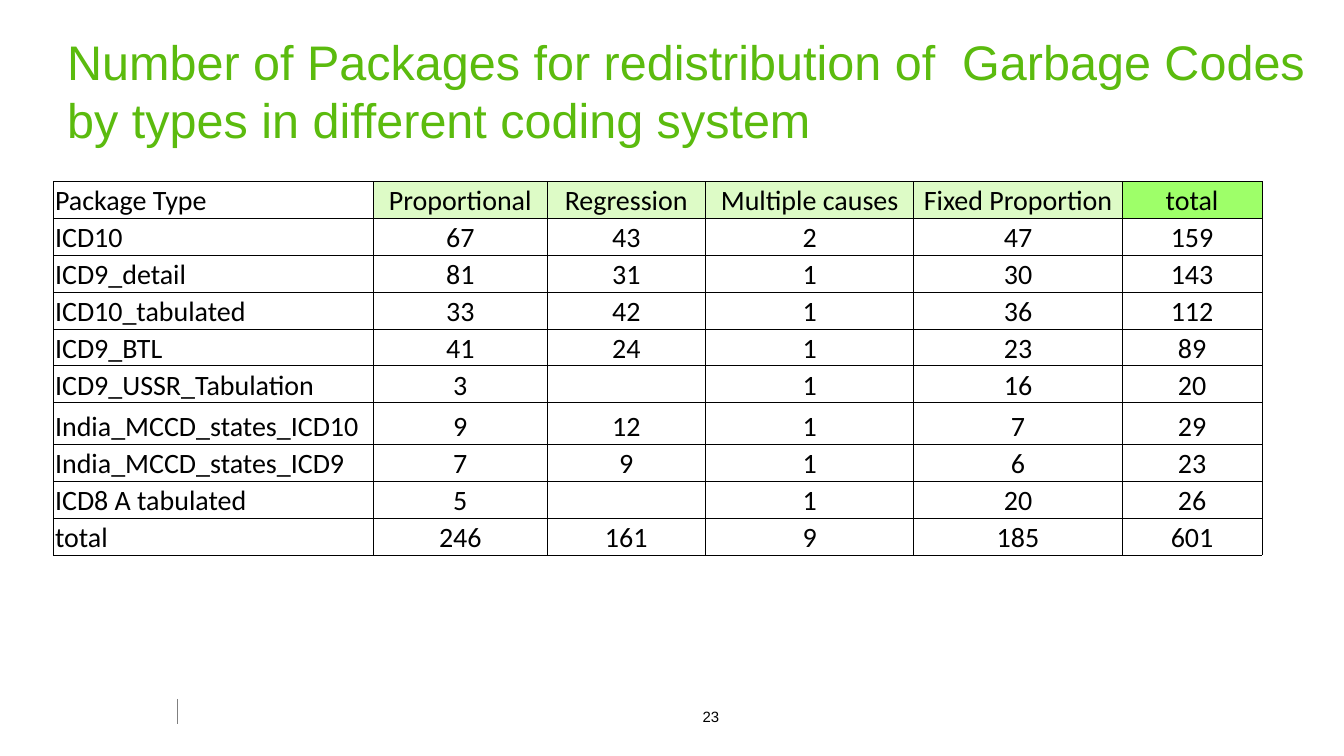
"""Build the slide that counts redistribution packages by type and coding system."""
import pptx
import pptx.dml.color
import pptx.enum.shapes
import pptx.enum.text
import pptx.oxml.ns
import pptx.util
from lxml import etree
from pptx.util import Inches

COLORS = {
    "title": "5BBB0E",
    "text": "000000",
    "border": "000000",
    "rule": "808080",
    "type_header": "DDFBC6",
    "total_header": "9EFF69",
}
ALIGN = pptx.enum.text.PP_ALIGN
ANCHOR = pptx.enum.text.MSO_ANCHOR

HEADER = ["Package Type", "Proportional", "Regression", "Multiple causes", "Fixed Proportion", "total"]
HEADER_FILLS = [None] + ["type_header"] * 4 + ["total_header"]
PACKAGES = [
    ["ICD10", 67, 43, 2, 47, 159],
    ["ICD9_detail", 81, 31, 1, 30, 143],
    ["ICD10_tabulated", 33, 42, 1, 36, 112],
    ["ICD9_BTL", 41, 24, 1, 23, 89],
    ["ICD9_USSR_Tabulation", 3, "", 1, 16, 20],
    ["India_MCCD_states_ICD10", 9, 12, 1, 7, 29],
    ["India_MCCD_states_ICD9", 7, 9, 1, 6, 23],
    ["ICD8 A tabulated", 5, "", 1, 20, 26],
    ["total", 246, 161, 9, 185, 601],
]
COLUMN_WIDTHS = [2.38, 1.29, 1.18, 1.55, 1.55, 1.04]
TABLE_HEIGHT = 2.78
TALL_ROW = 0.31
PLAIN_ROW = (TABLE_HEIGHT - TALL_ROW) / len(PACKAGES)


def rgb(name):
    """Return the named colour."""
    return pptx.dml.color.RGBColor.from_string(COLORS[name])


def write_text(text_frame, text, size, font="Arial", color="text", align=ALIGN.LEFT):
    """Write one formatted paragraph into a text frame."""
    paragraph = text_frame.paragraphs[0]
    paragraph.alignment = align
    if text == "":
        paragraph._p.get_or_add_endParaRPr().set("sz", str(size * 100))
        return
    run = paragraph.add_run()
    run.text = str(text)
    run.font.size = pptx.util.Pt(size)
    run.font.name = font
    run.font.color.rgb = rgb(color)


class SlideBuilder:
    """Hold the table style and the current slide."""

    table_font = "Calibri"
    table_size = 15
    border_width = 0.5

    def __init__(self, presentation):
        """Add a title-only slide."""
        self.slide = presentation.slides.add_slide(presentation.slide_layouts[5])

    def add_title(self, text, left, top, width, height):
        """Place and fill the title placeholder."""
        title = self.slide.shapes.title
        title.left, title.top = Inches(left), Inches(top)
        title.width, title.height = Inches(width), Inches(height)
        title.text_frame.word_wrap = True
        title.text_frame.vertical_anchor = ANCHOR.MIDDLE
        write_text(title.text_frame, text, 26, color="title")

    def add_rule(self, x, top, bottom):
        """Draw the thin vertical footer rule."""
        rule = self.slide.shapes.add_connector(
            pptx.enum.shapes.MSO_CONNECTOR.STRAIGHT, Inches(x), Inches(top), Inches(x), Inches(bottom))
        rule.line.color.rgb = rgb("rule")
        rule.line.width = pptx.util.Pt(0.25)
        etree.SubElement(rule._element.spPr, pptx.oxml.ns.qn("a:effectLst"))

    def add_page_number(self, text, left, top, width, height):
        """Add the centred page number."""
        box = self.slide.shapes.add_textbox(Inches(left), Inches(top), Inches(width), Inches(height))
        box.text_frame.word_wrap = False
        box.text_frame.vertical_anchor = ANCHOR.MIDDLE
        write_text(box.text_frame, text, 8, align=ALIGN.CENTER)

    def add_borders(self, cell):
        """Draw a thin line on each side of a cell."""
        properties = cell._tc.get_or_add_tcPr()
        for side in ("lnL", "lnR", "lnT", "lnB"):
            line = etree.SubElement(properties, pptx.oxml.ns.qn(f"a:{side}"))
            line.set("w", str(pptx.util.Pt(self.border_width)))
            fill = etree.SubElement(line, pptx.oxml.ns.qn("a:solidFill"))
            etree.SubElement(fill, pptx.oxml.ns.qn("a:srgbClr")).set("val", COLORS["border"])

    def format_cell(self, cell, text, align, fill):
        """Write, border and fill one table cell."""
        cell.margin_left = cell.margin_right = cell.margin_top = Inches(0.01)
        cell.margin_bottom = 0
        cell.vertical_anchor = ANCHOR.BOTTOM
        write_text(cell.text_frame, text, self.table_size, font=self.table_font, align=align)
        self.add_borders(cell)
        if fill:
            cell.fill.solid()
            cell.fill.fore_color.rgb = rgb(fill)
        else:
            cell.fill.background()

    def add_table(self, rows, left, top):
        """Add the package table with a coloured header row."""
        table = self.slide.shapes.add_table(
            len(rows), len(COLUMN_WIDTHS), Inches(left), Inches(top),
            Inches(sum(COLUMN_WIDTHS)), Inches(TABLE_HEIGHT)).table
        table.horz_banding = False
        table.first_row = False
        for column, width in zip(table.columns, COLUMN_WIDTHS):
            column.width = Inches(width)
        for row_index, values in enumerate(rows):
            is_tall = values[0] == "India_MCCD_states_ICD10"
            table.rows[row_index].height = Inches(TALL_ROW if is_tall else PLAIN_ROW)
            for column_index, value in enumerate(values):
                align = ALIGN.CENTER if column_index else ALIGN.LEFT
                fill = HEADER_FILLS[column_index] if row_index == 0 else None
                self.format_cell(table.cell(row_index, column_index), value, align, fill)


def main():
    """Build and save the presentation."""
    presentation = pptx.Presentation()
    presentation.slide_width = Inches(10)
    presentation.slide_height = Inches(10 * 9 / 16)
    builder = SlideBuilder(presentation)
    builder.add_rule(1.32, 5.2, 5.39)
    builder.add_title(
        "Number of Packages for redistribution of  Garbage Codes by types in different coding system",
        0.4, 0.18, 9.6, 0.98)
    builder.add_table([HEADER] + PACKAGES, 0.4, 1.35)
    builder.add_page_number("23", 5.12, 5.21, 0.34, 0.24)
    presentation.save("out.pptx")


if __name__ == "__main__":
    main()
